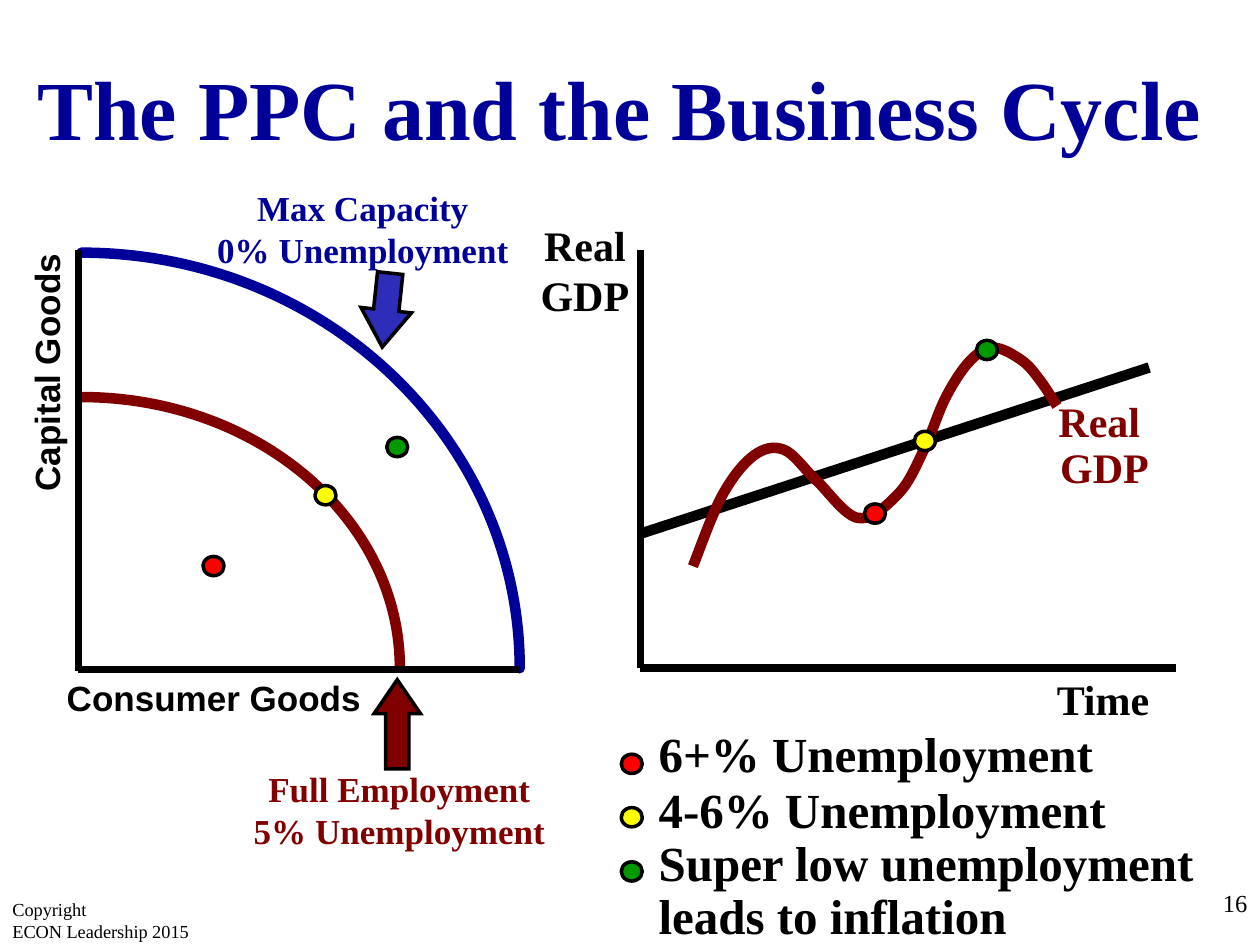
import math
from lxml import etree
from pptx import Presentation
from pptx.dml import color
from pptx.enum import shapes, text
from pptx.oxml import ns
from pptx.util import Pt

SERIF, SANS = "Times New Roman", "Arial"
BLACK, NAVY, MAROON = "000000", "000099", "800000"
RED, YELLOW, GREEN = "FF0000", "FFFF00", "009900"
LEFT, CENTER, RIGHT = (text.PP_ALIGN.LEFT, text.PP_ALIGN.CENTER,
                       text.PP_ALIGN.RIGHT)


def rgb(value):
    return color.RGBColor.from_string(value)


def place(sp, box):
    sp.left, sp.top, sp.width, sp.height = (Pt(v) for v in box)


def write(tf, lines, size, hue=BLACK, font=SERIF, bold=True, align=CENTER,
          spacing=None, wrap=True):
    tf.word_wrap = wrap
    tf.auto_size = text.MSO_AUTO_SIZE.NONE
    for i, line in enumerate(lines):
        p = tf.add_paragraph() if i else tf.paragraphs[0]
        p.alignment = align
        if spacing:
            p.line_spacing = spacing
        r = p.add_run()
        r.text = line
        r.font.size, r.font.name, r.font.bold = Pt(size), font, bold
        r.font.color.rgb = rgb(hue)


def label(slide, box, lines, size, **style):
    sp = slide.shapes.add_textbox(*(Pt(v) for v in box))
    write(sp.text_frame, lines, size, **style)
    return sp


def line(slide, start, end, width):
    c = slide.shapes.add_connector(shapes.MSO_CONNECTOR.STRAIGHT,
                                   *(Pt(v) for v in (*start, *end)))
    c.line.color.rgb, c.line.width = rgb(BLACK), Pt(width)
    etree.SubElement(c._element.spPr, ns.qn("a:effectLst"))


def curve(slide, points, hue, cap="flat"):
    """Bezier outline: a start, then two controls and an end per piece."""
    (x, y), *rest = [(Pt(a), Pt(b)) for a, b in points]
    builder = slide.shapes.build_freeform(x, y, scale=1.0)
    builder.add_line_segments(rest, close=False)
    sp = builder.convert_to_shape()
    sp.fill.background()
    sp.line.color.rgb, sp.line.width = rgb(hue), Pt(6)
    sp.line._get_or_add_ln().set("cap", cap)
    sp.shadow.inherit = False
    segments = list(sp._element.iter(ns.qn("a:lnTo")))
    outline = segments[0].getparent()
    for i in range(0, len(segments), 3):
        bezier = etree.SubElement(outline, ns.qn("a:cubicBezTo"))
        for segment in segments[i:i + 3]:
            bezier.append(segment[0])
            outline.remove(segment)


def outlined(slide, kind, center, size, hue):
    (x, y), (w, h) = center, size
    sp = slide.shapes.add_shape(
        kind, *(Pt(v) for v in (x - w / 2, y - h / 2, w, h)))
    sp.fill.solid()
    sp.fill.fore_color.rgb = rgb(hue)
    sp.line.color.rgb, sp.line.width = rgb(BLACK), Pt(2)
    sp.shadow.inherit = False
    return sp


def dot(slide, x, y, hue):
    outlined(slide, shapes.MSO_SHAPE.FLOWCHART_CONNECTOR, (x, y), (12, 11), hue)


def arrow(slide, center, size, angle, hue):
    sp = outlined(slide, shapes.MSO_SHAPE.RIGHT_ARROW, center, size, hue)
    sp.adjustments[0], sp.adjustments[1] = 0.5, 0.73
    sp.rotation = angle
    etree.SubElement(sp.line._get_or_add_ln(), ns.qn("a:miter"), lim="800000")


def quarter_ellipse(x, bottom, rx, ry):
    k = 4 / 3 * (math.sqrt(2) - 1)
    return [(x, bottom - ry), (x + k * rx, bottom - ry),
            (x + rx, bottom - k * ry), (x + rx, bottom)]


def spline(knots):
    """Bezier points of a Catmull-Rom curve through the knots."""
    ends = [knots[0], *knots, knots[-1]]
    points = [knots[0]]
    for a, b, c, d in zip(ends, ends[1:], ends[2:], ends[3:]):
        points += [(b[0] + (c[0] - a[0]) / 6, b[1] + (c[1] - a[1]) / 6),
                   (c[0] - (d[0] - b[0]) / 6, c[1] - (d[1] - b[1]) / 6), c]
    return points


def ppc_panel(slide, left, top, width, height):
    bottom = top + height
    for rx, ry, hue, cap in ((250.5, 237.5, NAVY, "rnd"),
                             (182, 155, MAROON, "flat")):
        curve(slide, quarter_ellipse(left + 1.5, bottom - 0.5, rx, ry), hue, cap)
    line(slide, (left - 0.4, top), (left - 0.4, bottom + 1), 4)
    line(slide, (left - 0.4, bottom), (left + width + 0.4, bottom), 4)

    axis = label(slide, (left - 97, top + 51.5, 157, 31.5), ["Capital Goods "],
                 20, font=SANS, wrap=False)
    axis.rotation = 270
    label(slide, (left - 14.8, bottom + 0.5, 184, 31.5), ["Consumer Goods"],
          20, font=SANS, wrap=False)
    label(slide, (left + 60.3, top - 40, 204, 55.5),
          ["Max Capacity", "0% Unemployment"], 20, hue=NAVY)
    label(slide, (left + 81.2, bottom + 52.5, 204, 55.5),
          ["Full Employment", "5% Unemployment"], 20, hue=MAROON)

    arrow(slide, (left + 175.7, top + 34.2), (42.5, 29), 96.1, "2D2DB9")
    arrow(slide, (left + 182, bottom + 31.5), (51, 26.5), 270, MAROON)
    for x, y, hue in ((77, 180.5, RED), (141, 140, YELLOW), (182, 112.5, GREEN)):
        dot(slide, left + x, top + y, hue)


def cycle_panel(slide, left, top, width, height):
    bottom = top + height
    line(slide, (left, top + 162), (left + 290.7, top + 67), 6)
    wave = [(30, 180.5), (46.5, 140.5), (64.5, 117.5), (82, 114), (100.5, 131.5),
            (124.5, 153), (147.5, 139), (162, 114), (174.5, 84), (188.5, 63),
            (202, 55.7), (218, 63), (228.5, 74.5), (238, 89)]
    curve(slide, spline([(left + x, top + y) for x, y in wave]), MAROON)
    line(slide, (left, top), (left, bottom), 4.5)
    line(slide, (left, bottom - 0.2), (left + width, bottom - 0.2), 4.5)

    label(slide, (left - 81.3, top - 21.3, 99, 65.5), ["Real GDP"], 24)
    label(slide, (left + 204.3, bottom - 0.5, 120, 36.5), ["Time"], 24)
    label(slide, (left + 176.7, top + 82.8, 177, 60), ["Real ", "GDP"], 24,
          hue=MAROON, spacing=0.9)
    for x, y, hue in ((134, 150.5, RED), (162.5, 109, YELLOW), (198, 57, GREEN)):
        dot(slide, left + x, top + y, hue)


def legend(slide, left, top, width):
    entries = [("6+% Unemployment", RED, 0, 26.5, 41, None),
               ("4-6% Unemployment", YELLOW, 31.7, 57, 41, None),
               ("Super low unemployment leads to inflation", GREEN,
                66, 88, 68.5, 0.9)]
    for name, hue, text_y, dot_y, height, spacing in entries:
        dot(slide, left + 6, top + dot_y, hue)
        label(slide, (left + 14.3, top + text_y, width - 14.3, height), [name],
              28, align=LEFT, spacing=spacing)


def footer(slide, top, width):
    label(slide, (0, top + 5.7, 120, 36), ["Copyright", "ECON Leadership 2015"],
          10.5, bold=False, align=LEFT)
    label(slide, (width - 150, top, 150, 36), ["16"], 14, bold=False,
          align=RIGHT)


def main():
    prs = Presentation()
    prs.slide_width, prs.slide_height = Pt(720), Pt(540)
    slide = prs.slides.add_slide(prs.slide_layouts[5])
    title = slide.shapes.title
    place(title, (0, 28.5, 720, 65.5))
    write(title.text_frame, ["The PPC and the Business Cycle "], 48, hue=NAVY)
    ppc_panel(slide, 45, 143, 252, 239.4)
    cycle_panel(slide, 366, 143, 306, 239)
    legend(slide, 355, 410, 348.5)
    footer(slide, 504, 720)
    prs.save("out.pptx")


if __name__ == "__main__":
    main()
